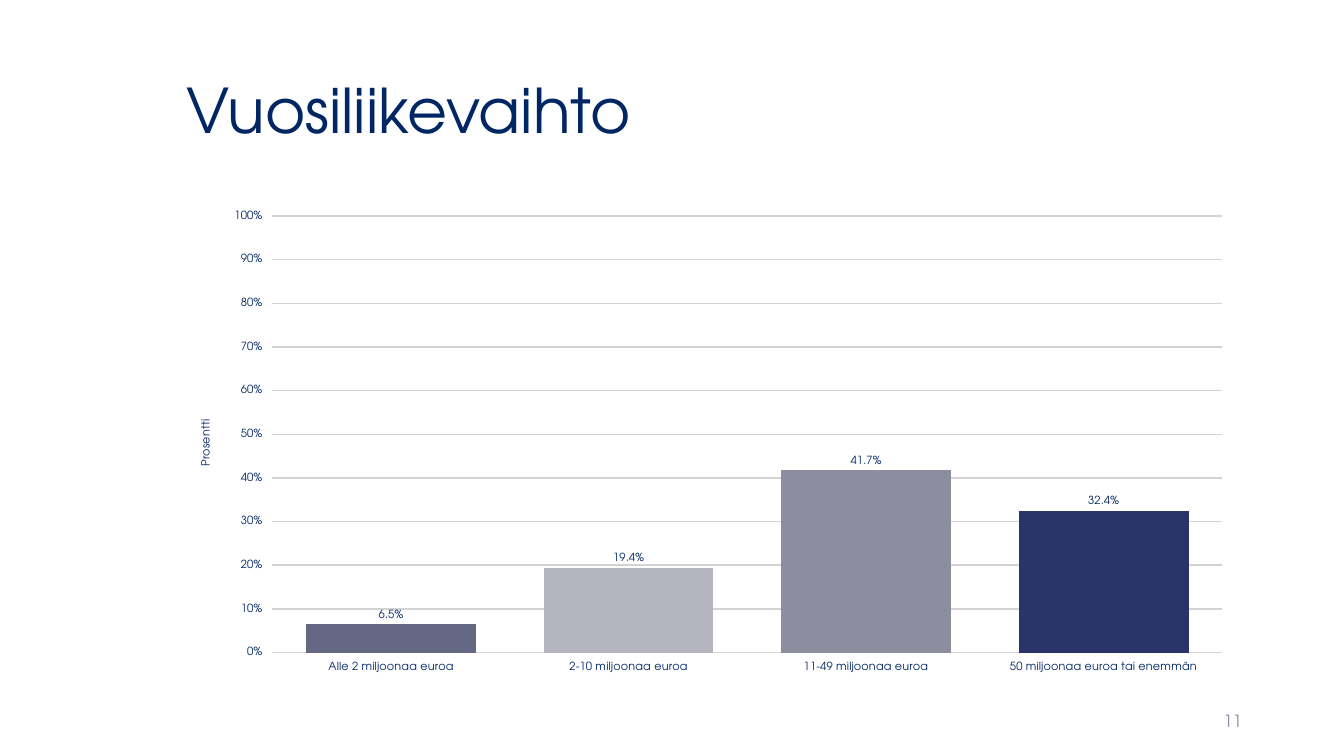
"""Build the annual turnover slide with a column chart."""
from lxml import etree
from pptx import Presentation
from pptx.chart import data as chartdata
from pptx.dml import color
from pptx.enum import chart as kinds, text
from pptx.oxml import ns
from pptx.util import Pt

FONT = "TeX Gyre Adventor"
COLOURS = {"navy": "002663", "grey": "8C8E9F", "grid": "D3D3D3"}
TURNOVER = [
    ("Alle 2 miljoonaa euroa", 0.065, "646883"),
    ("2-10 miljoonaa euroa", 0.194, "B4B5BF"),
    ("11-49 miljoonaa euroa", 0.417, "8C8E9F"),
    ("50 miljoonaa euroa tai enemmän", 0.324, "293568"),
]


def style(font, size, colour):
    font.name = FONT
    font.size = Pt(size)
    font.bold = False
    font.color.rgb = color.RGBColor.from_string(colour)


def place(parent, index, settings):
    for old in parent.findall(ns.qn("c:layout")):
        parent.remove(old)
    layout = etree.Element(ns.qn("c:layout"))
    manual = etree.SubElement(layout, ns.qn("c:manualLayout"))
    for key, value in settings.items():
        etree.SubElement(manual, ns.qn(f"c:{key}")).set("val", str(value))
    parent.insert(index, layout)


deck = Presentation()
deck.slide_width, deck.slide_height = Pt(960), Pt(540)
page = deck.slides.add_slide(deck.slide_layouts[5])

title = page.shapes.title
title.left, title.top, title.width, title.height = Pt(126), Pt(28.8), Pt(762.5), Pt(104.4)
title.text_frame.text = "Vuosiliikevaihto"
title.text_frame.vertical_anchor = text.MSO_ANCHOR.MIDDLE
para = title.text_frame.paragraphs[0]
para.alignment = text.PP_ALIGN.LEFT
para.line_spacing = 0.9
style(para.runs[0].font, 44, COLOURS["navy"])

number = page.shapes.add_textbox(Pt(678.2), Pt(500.4), Pt(216), Pt(28.8))
number.text_frame.word_wrap = True
number.text_frame.vertical_anchor = text.MSO_ANCHOR.MIDDLE
number.text_frame.text = "11"
para = number.text_frame.paragraphs[0]
para.alignment = text.PP_ALIGN.RIGHT
para.space_after = Pt(6)
style(para.runs[0].font, 12, COLOURS["grey"])

shares = chartdata.CategoryChartData(number_format="0.0%")
shares.categories = [name for name, share, fill in TURNOVER]
shares.add_series("Series 1", [share for name, share, fill in TURNOVER])
chart = page.shapes.add_chart(
    kinds.XL_CHART_TYPE.COLUMN_CLUSTERED, Pt(126), Pt(144), Pt(762.5), Pt(342.7), shares
).chart
chart.has_legend = False
chart.has_title = False
style(chart.font, 18, COLOURS["navy"])

plot = chart.plots[0]
plot.gap_width = 40
plot.overlap = -2
plot.vary_by_categories = False
for index, (name, share, fill) in enumerate(TURNOVER):
    bar = plot.series[0].points[index].format.fill
    bar.solid()
    bar.fore_color.rgb = color.RGBColor.from_string(fill)
plot.has_data_labels = True
labels = plot.data_labels
labels.show_value = True
labels.number_format = "0.0%"
labels.number_format_is_linked = False
labels.position = kinds.XL_LABEL_POSITION.OUTSIDE_END
style(labels.font, 8, COLOURS["navy"])

for axis in (chart.category_axis, chart.value_axis):
    axis.major_tick_mark = kinds.XL_TICK_MARK.OUTSIDE
    axis.format.line.fill.background()
    style(axis.tick_labels.font, 8, COLOURS["navy"])

percent = chart.value_axis
percent.minimum_scale, percent.maximum_scale, percent.major_unit = 0, 1, 0.1
percent.tick_labels.number_format = "0%"
percent.tick_labels.number_format_is_linked = False
percent.has_major_gridlines = True
percent.major_gridlines.format.line.width = Pt(1)
percent.major_gridlines.format.line.color.rgb = color.RGBColor.from_string(COLOURS["grid"])

percent.has_title = True
caption = percent.axis_title
caption.text_frame.text = "Prosentti"
style(caption.text_frame.paragraphs[0].runs[0].font, 8, COLOURS["navy"])
body = caption.element.find(".//" + ns.qn("a:bodyPr"))
body.set("rot", "-5400000")
body.set("vert", "horz")

place(caption.element, 1, {"xMode": "edge", "yMode": "edge", "x": 0.02, "y": 0.45})
place(
    chart.element.find(".//" + ns.qn("c:plotArea")), 0,
    {"layoutTarget": "inner", "xMode": "edge", "yMode": "edge",
     "x": 0.09, "y": 0.03, "w": 0.89, "h": 0.91},
)

deck.save("out.pptx")
